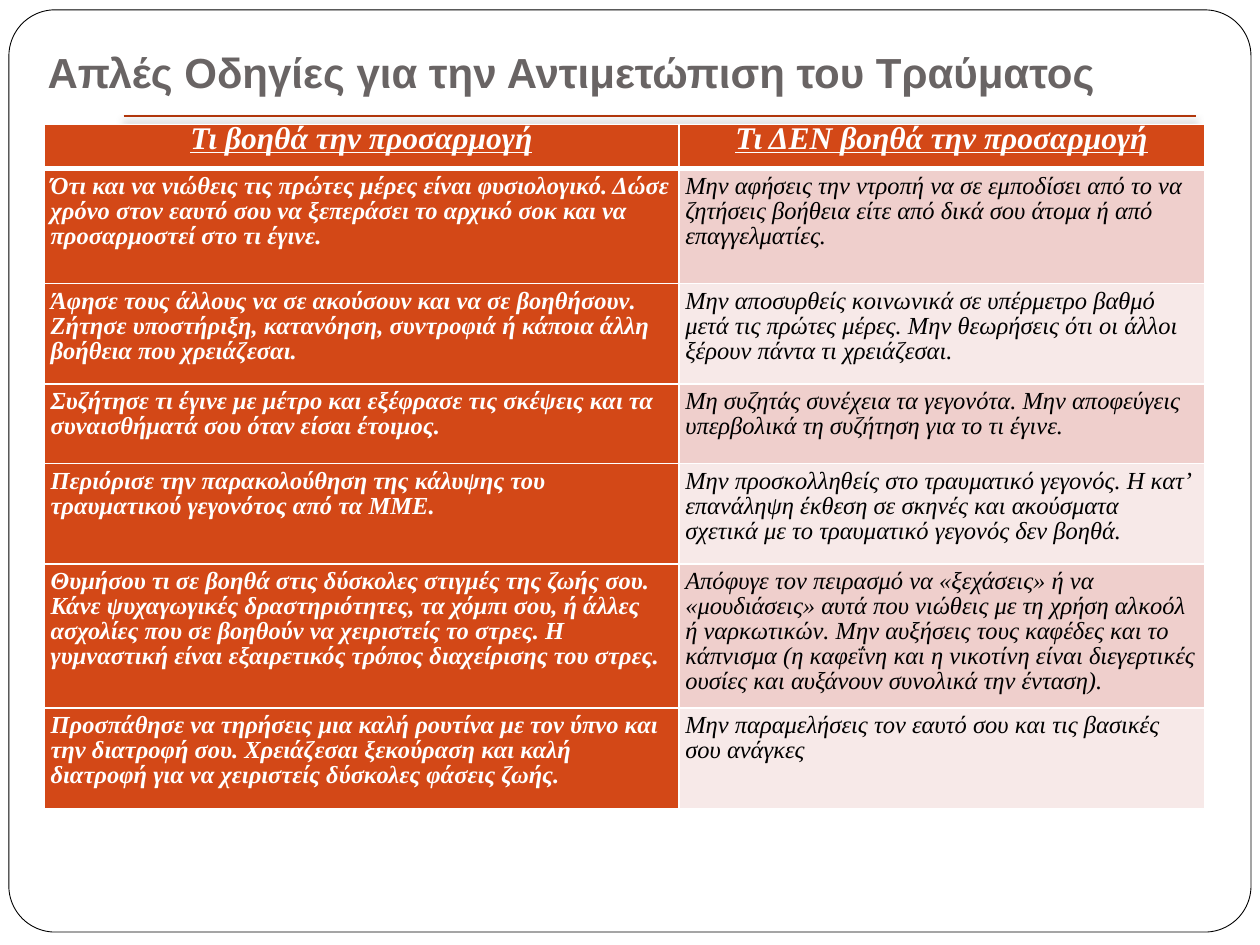
from lxml.etree import SubElement
from pptx import Presentation
from pptx.dml.color import RGBColor
from pptx.enum.shapes import MSO_CONNECTOR, MSO_SHAPE
from pptx.enum.text import MSO_ANCHOR, PP_ALIGN
from pptx.oxml import parse_xml
from pptx.oxml.ns import nsdecls, qn
from pptx.util import Cm, Pt

COLORS = {
    "white": "FFFFFF", "black": "000000", "title": "696464", "rule": "B1360B",
    "accent": "D34817", "band_dark": "EFCFCC", "band_light": "F7E9E8",
}
HEADINGS = ("Τι βοηθά την προσαρμογή", "Τι ΔΕΝ βοηθά την προσαρμογή")
ADVICE = [
    ("Ότι και να νιώθεις τις πρώτες μέρες είναι φυσιολογικό. Δώσε χρόνο στον εαυτό σου "
     "να ξεπεράσει το αρχικό σοκ και να προσαρμοστεί στο τι έγινε.",
     "Μην αφήσεις την ντροπή να σε εμποδίσει από το να ζητήσεις βοήθεια είτε από δικά "
     "σου άτομα ή από επαγγελματίες."),
    ("Άφησε τους άλλους να σε ακούσουν και να σε βοηθήσουν. Ζήτησε υποστήριξη, "
     "κατανόηση, συντροφιά ή κάποια άλλη βοήθεια που χρειάζεσαι.",
     "Μην αποσυρθείς κοινωνικά σε υπέρμετρο βαθμό μετά τις πρώτες μέρες. Μην θεωρήσεις "
     "ότι οι άλλοι ξέρουν πάντα τι χρειάζεσαι."),
    ("Συζήτησε τι έγινε με μέτρο και εξέφρασε τις σκέψεις και τα συναισθήματά σου όταν "
     "είσαι έτοιμος.",
     "Μη συζητάς συνέχεια τα γεγονότα. Μην αποφεύγεις υπερβολικά τη συζήτηση για το τι "
     "έγινε."),
    ("Περιόρισε την παρακολούθηση της κάλυψης του τραυματικού γεγονότος από τα ΜΜΕ.",
     "Μην προσκολληθείς στο τραυματικό γεγονός. Η κατ’ επανάληψη έκθεση σε σκηνές και "
     "ακούσματα σχετικά με το τραυματικό γεγονός δεν βοηθά."),
    ("Θυμήσου τι σε βοηθά στις δύσκολες στιγμές της ζωής σου. Κάνε ψυχαγωγικές "
     "δραστηριότητες, τα χόμπι σου, ή άλλες ασχολίες που σε βοηθούν να χειριστείς το "
     "στρες. Η γυμναστική είναι εξαιρετικός τρόπος διαχείρισης του στρες.",
     "Απόφυγε τον πειρασμό να «ξεχάσεις» ή να «μουδιάσεις» αυτά που νιώθεις με τη χρήση "
     "αλκοόλ ή ναρκωτικών. Μην αυξήσεις τους καφέδες και το κάπνισμα (η καφεΐνη και η "
     "νικοτίνη είναι διεγερτικές ουσίες και αυξάνουν συνολικά την ένταση)."),
    ("Προσπάθησε να τηρήσεις μια καλή ρουτίνα με τον ύπνο και την διατροφή σου. "
     "Χρειάζεσαι ξεκούραση και καλή διατροφή για να χειριστείς δύσκολες φάσεις ζωής.",
     "Μην παραμελήσεις τον εαυτό σου και τις βασικές σου ανάγκες"),
]
COLUMN_SHARES = (0.547, 0.453)
ROW_HEIGHTS = (0.89, 2.31, 2.03, 1.6, 2.03, 2.9, 2.03)


def color(name):
    return RGBColor.from_string(COLORS[name])


def add_span(para, text, font_name, size, color_name, bold=True, italic=False, underline=False):
    span = para.add_run()
    span.text = text
    font = span.font
    font.name, font.size = font_name, Pt(size)
    font.bold, font.italic, font.underline = bold, italic, underline
    font.color.rgb = color(color_name)


def add_frame(page, left, top, width, height):
    frame = page.shapes.add_shape(
        MSO_SHAPE.ROUNDED_RECTANGLE, Cm(left), Cm(top), Cm(width), Cm(height))
    frame.adjustments[0] = 0.05
    frame.shadow.inherit = False
    frame.fill.solid()
    frame.fill.fore_color.rgb = color("white")
    frame.line.color.rgb = color("black")
    frame.line.width = Pt(0.5)


def add_rule(page, left, top, width):
    rule = page.shapes.add_connector(
        MSO_CONNECTOR.STRAIGHT, Cm(left), Cm(top), Cm(left + width), Cm(top))
    rule.line.color.rgb = color("rule")
    rule.line.width = Pt(1)
    # Soft shadow below the rule
    rule.element.spPr.append(parse_xml(
        f'<a:effectLst {nsdecls("a")}><a:outerShdw blurRad="{Pt(4)}" dist="{Pt(3)}" '
        f'dir="5400000" rotWithShape="0"><a:srgbClr val="{COLORS["black"]}">'
        '<a:alpha val="40000"/></a:srgbClr></a:outerShdw></a:effectLst>'))


def place_title(page, left, top, width, height):
    title = page.shapes.title
    title.left, title.top, title.width, title.height = map(Cm, (left, top, width, height))
    text = title.text_frame
    text.word_wrap = True
    text.vertical_anchor = MSO_ANCHOR.BOTTOM
    text.margin_left = text.margin_right = text.margin_bottom = Cm(0.25)
    text.margin_top = Cm(0.13)
    para = text.paragraphs[0]
    para.alignment = PP_ALIGN.LEFT
    add_span(para, "Απλές Οδηγίες για την Αντιμετώπιση του Τραύματος", "Arial", 24, "title")
    # Bring the title in front of the frame
    title.element.getparent().append(title.element)


def set_borders(cell, top, bottom):
    properties = cell._tc.get_or_add_tcPr()
    widths = {"a:lnL": 1, "a:lnR": 1, "a:lnT": top, "a:lnB": bottom}
    for position, (side, width) in enumerate(widths.items()):
        border = SubElement(properties, qn(side), w=str(Pt(width)))
        fill = SubElement(border, qn("a:solidFill"))
        SubElement(fill, qn("a:srgbClr"), val=COLORS["white"])
        properties.insert(position, border)


def fill_cell(cell, text, row, column):
    heading, left_side = row == 0, column == 0
    accented = heading or left_side
    band = "band_dark" if row % 2 else "band_light"
    cell.fill.solid()
    cell.fill.fore_color.rgb = color("accent" if accented else band)
    cell.margin_left = cell.margin_right = cell.margin_top = cell.margin_bottom = Cm(0.13)
    cell.vertical_anchor = MSO_ANCHOR.TOP
    set_borders(cell, top=3 if row == 1 else 1, bottom=3 if heading else 1)
    para = cell.text_frame.paragraphs[0]
    para.alignment = PP_ALIGN.CENTER if heading else PP_ALIGN.LEFT
    para.line_spacing = Pt(14.2)
    add_span(para, text, "Times New Roman", 18 if heading else 14,
             "white" if accented else "black",
             bold=accented, italic=True, underline=heading)


def add_advice_table(page, left, top, width):
    rows = [HEADINGS, *ADVICE]
    table = page.shapes.add_table(
        len(rows), len(HEADINGS), Cm(left), Cm(top), Cm(width), Cm(sum(ROW_HEIGHTS))).table
    for column, share in zip(table.columns, COLUMN_SHARES):
        column.width = Cm(width * share)
    for row, height in zip(table.rows, ROW_HEIGHTS):
        row.height = Cm(height)
    for row_index, texts in enumerate(rows):
        for column_index, text in enumerate(texts):
            fill_cell(table.cell(row_index, column_index), text, row_index, column_index)


def main():
    deck = Presentation()
    deck.slide_width, deck.slide_height = Cm(25.4), Cm(19.05)
    page = deck.slides.add_slide(deck.slide_layouts[5])
    # Backdrop
    add_frame(page, 0.18, 0.2, 25.04, 18.59)
    add_rule(page, 2.49, 2.34, 21.61)
    # Content
    place_title(page, 0.71, 0, 24.21, 2.21)
    add_advice_table(page, 0.89, 2.51, 23.39)
    deck.save("out.pptx")


if __name__ == "__main__":
    main()
